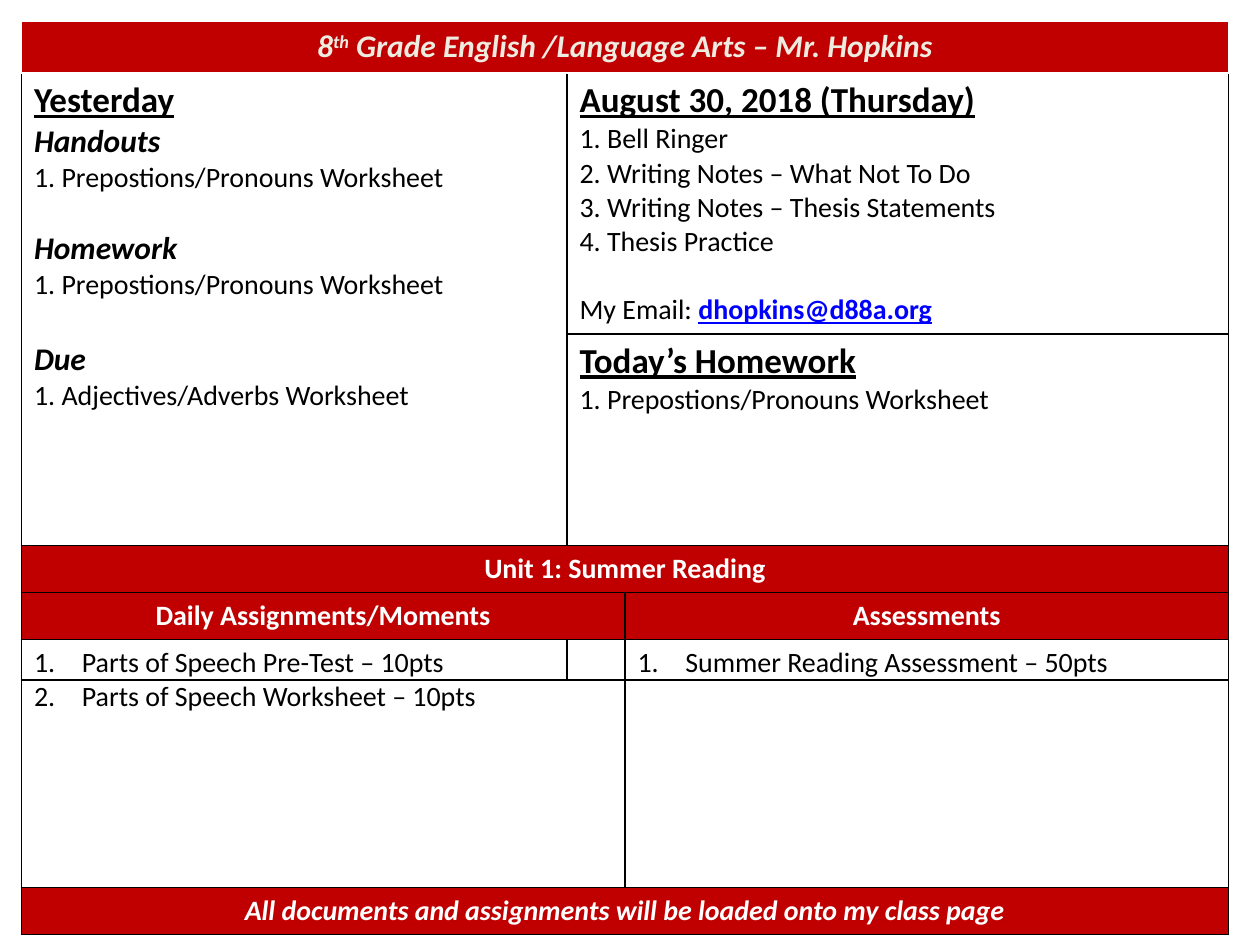
from lxml import etree
from pptx import Presentation
from pptx.dml.color import RGBColor
from pptx.enum.text import PP_ALIGN
from pptx.oxml.ns import qn
from pptx.util import Inches, Pt

CENTER = PP_ALIGN.CENTER
RED, BLACK, WHITE, CREAM, BLUE = "C00000", "000000", "FFFFFF", "EEECE1", "0000FF"

# Text styles: size, bold, italic, underline, colour
HEADING = (20, True, False, True, BLACK)
SUBHEADING = (18, True, True, False, BLACK)
BODY = (16, False, False, False, BLACK)
BANNER = (16, True, False, False, WHITE)
CLOSING = (16, True, True, False, WHITE)
TITLE = (18, True, True, False, CREAM)
EMAIL = (16, True, False, True, BLUE)

LEFT, WIDTH = 0.17, 9.58
HANG = 0.38
AGENDA_HANG = 0.58
BODY_GAP, SUBHEADING_GAP = 19.5, 22


def set_font(font, style):
    font.name = "Calibri"
    size, font.bold, font.italic, font.underline, color = style
    font.size = Pt(size)
    font.color.rgb = RGBColor.from_string(color)


def write(cell, lines, align=None, hang=0, numbered=False):
    """Fill a cell with lines of (text, style, optional space before in points)."""
    for index, (text, style, *gap) in enumerate(lines):
        frame = cell.text_frame
        paragraph = frame.add_paragraph() if index else frame.paragraphs[0]
        paragraph.alignment = align
        if gap:
            paragraph.space_before = Pt(gap[0])
        properties = paragraph._p.get_or_add_pPr()
        if hang:
            properties.set("marL", str(Inches(hang)))
            properties.set("indent", str(-Inches(hang)))
        if numbered:
            etree.SubElement(properties, qn("a:buAutoNum"), type="arabicPeriod")
        set_font(paragraph.font, style)
        paragraph.add_run().text = text


presentation = Presentation()
presentation.slide_width = Inches(10)
presentation.slide_height = Inches(7.5)
slide = presentation.slides.add_slide(presentation.slide_layouts[6])

# Each table: top, column widths, row heights, bordered, rows filled red
layouts = [
    (0.58, [4.33, 5.25], [1.83, 1.83], True, []),
    (0.17, [WIDTH], [0.41], False, [0]),
    (4.33, [WIDTH / 2] * 2, [0.37, 0.37, 1.97, 0.37], True, [0, 1, 3]),
]
tables = []
for top, columns, rows, bordered, red_rows in layouts:
    table = slide.shapes.add_table(
        len(rows), len(columns), Inches(LEFT), Inches(top),
        Inches(WIDTH), Inches(sum(rows))).table
    table.first_row = table.horz_banding = False
    for column, width in zip(table.columns, columns):
        column.width = Inches(width)
    for row_index, (row, height) in enumerate(zip(table.rows, rows)):
        row.height = Inches(height)
        for cell in row.cells:
            if row_index in red_rows:
                cell.fill.solid()
                cell.fill.fore_color.rgb = RGBColor.from_string(RED)
            else:
                cell.fill.background()
            if bordered:
                cell_properties = cell._tc.get_or_add_tcPr()
                for position, side in enumerate(("lnL", "lnR", "lnT", "lnB")):
                    line = etree.Element(qn(f"a:{side}"), w=str(Pt(1)))
                    line_fill = etree.SubElement(line, qn("a:solidFill"))
                    etree.SubElement(line_fill, qn("a:srgbClr"), val=BLACK)
                    cell_properties.insert(position, line)
    tables.append(table)
agenda, header, unit = tables

# Yesterday, today and homework
agenda.cell(0, 0).merge(agenda.cell(1, 0))
worksheet = "1. Prepostions/Pronouns Worksheet"
write(agenda.cell(0, 0), [
    ("Yesterday", HEADING),
    ("Handouts", SUBHEADING),
    (worksheet, BODY),
    ("Homework", SUBHEADING, BODY_GAP),
    (worksheet, BODY),
    ("Due", SUBHEADING, SUBHEADING_GAP),
    ("1. Adjectives/Adverbs Worksheet", BODY),
])
write(agenda.cell(0, 1), [
    ("August 30, 2018 (Thursday)", HEADING),
    ("1. Bell Ringer", BODY),
    ("2. Writing Notes – What Not To Do", BODY),
    ("3. Writing Notes – Thesis Statements", BODY),
    ("4. Thesis Practice", BODY),
    ("My Email: ", BODY, BODY_GAP),
], hang=AGENDA_HANG)
email = agenda.cell(0, 1).text_frame.paragraphs[-1].add_run()
email.text = "dhopkins@d88a.org"
set_font(email.font, EMAIL)
write(agenda.cell(1, 1), [("Today’s Homework", HEADING), (worksheet, BODY)],
      hang=AGENDA_HANG)

# Class title
write(header.cell(0, 0), [("8", TITLE)], align=CENTER)
title = header.cell(0, 0).text_frame.paragraphs[0]
ordinal = title.add_run()
ordinal.text = "th"
ordinal.font._element.set("baseline", "30000")
title.add_run().text = " Grade English /Language Arts – Mr. Hopkins"

# Unit overview
for row_index, text, style in (
        (0, "Unit 1: Summer Reading", BANNER),
        (3, "All documents and assignments will be loaded onto my class page", CLOSING)):
    unit.cell(row_index, 0).merge(unit.cell(row_index, 1))
    write(unit.cell(row_index, 0), [(text, style)], align=CENTER)
unit_columns = [
    ("Daily Assignments/Moments",
     ["Parts of Speech Pre-Test – 10pts", "Parts of Speech Worksheet – 10pts"]),
    ("Assessments", ["Summer Reading Assessment – 50pts"]),
]
for column_index, (heading, items) in enumerate(unit_columns):
    write(unit.cell(1, column_index), [(heading, BANNER)], align=CENTER)
    write(unit.cell(2, column_index), [(item, BODY) for item in items],
          hang=HANG, numbered=True)

presentation.save("out.pptx")
